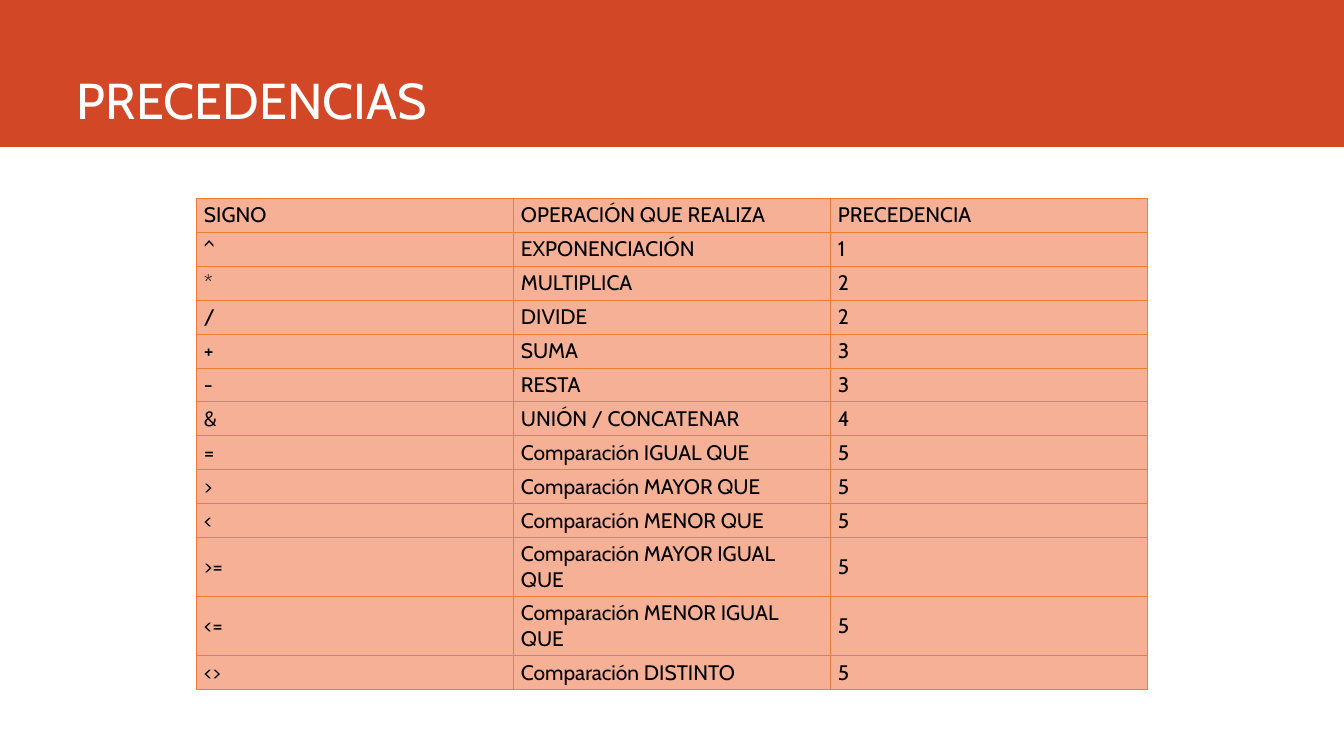
from lxml import etree
from pptx import Presentation
from pptx.dml.color import RGBColor
from pptx.enum.shapes import MSO_SHAPE
from pptx.enum.text import MSO_ANCHOR
from pptx.oxml.ns import qn
from pptx.util import Pt

RECTANGLE = MSO_SHAPE.RECTANGLE
BOTTOM, MIDDLE = MSO_ANCHOR.BOTTOM, MSO_ANCHOR.MIDDLE
RED = RGBColor(0xD2, 0x47, 0x26)
SALMON = RGBColor(0xF5, 0xB0, 0x96)
ORANGE = RGBColor(0xED, 0x7D, 0x31)
WHITE = RGBColor(0xFF, 0xFF, 0xFF)
BLACK = RGBColor(0x00, 0x00, 0x00)
WIDTH, HEIGHT = 1344, 756
SCALE = 12192000 / WIDTH
COLUMN, ROW, TALL_ROW = 317, 34, 59

PRECEDENCES = [
    ("SIGNO", "OPERACIÓN QUE REALIZA", "PRECEDENCIA"),
    ("^", "EXPONENCIACIÓN", "1"),
    ("*", "MULTIPLICA", "2"),
    ("/", "DIVIDE", "2"),
    ("+", "SUMA", "3"),
    ("-", "RESTA", "3"),
    ("&", "UNIÓN / CONCATENAR", "4"),
    ("=", "Comparación IGUAL QUE", "5"),
    (">", "Comparación MAYOR QUE", "5"),
    ("<", "Comparación MENOR QUE", "5"),
    (">=", "Comparación MAYOR IGUAL QUE", "5"),
    ("<=", "Comparación MENOR IGUAL QUE", "5"),
    ("<>", "Comparación DISTINTO", "5"),
]
TWO_LINE_SIGNS = {">=", "<="}


def px(*lengths):
    """Turn pixel lengths into EMU."""
    return [round(length * SCALE) for length in lengths]


class SlideBuilder:
    """Draw elements in one style on the current slide."""

    font_name = "Cabin"

    def __init__(self, slide):
        self.slide = slide

    def style(self, paragraph, size, color):
        """Set the font of a paragraph."""
        font = paragraph.font
        font.name, font.size = self.font_name, Pt(size)
        font.color.rgb = color

    def band(self, left, top, width, height, color):
        """Add a plain filled rectangle."""
        band = self.slide.shapes.add_shape(RECTANGLE, *px(left, top, width, height))
        band.shadow.inherit = False
        band.fill.solid()
        band.fill.fore_color.rgb = color
        band.line.fill.background()

    def title(self, text, left, top, width, height):
        """Add the slide title, set on the bottom of its box."""
        frame = self.slide.shapes.add_textbox(*px(left, top, width, height)).text_frame
        frame.word_wrap = True
        frame.vertical_anchor = BOTTOM
        frame.margin_left, frame.margin_right = px(10, 10)
        frame.margin_top, frame.margin_bottom = px(5, 5)
        frame.text = text
        self.style(frame.paragraphs[0], 36, WHITE)

    def table(self, rows, left, top):
        """Add a bordered table with equal columns."""
        heights = [TALL_ROW if row[0] in TWO_LINE_SIGNS else ROW for row in rows]
        columns = len(rows[0])
        table = self.slide.shapes.add_table(
            len(rows), columns, *px(left, top, COLUMN * columns, sum(heights))
        ).table
        for column in table.columns:
            column.width = px(COLUMN)[0]
        for row, height, texts in zip(table.rows, heights, rows):
            row.height = px(height)[0]
            for cell, text in zip(row.cells, texts):
                self.cell(cell, text)

    def cell(self, cell, text):
        """Fill, border and write one table cell."""
        cell.text = text
        cell.vertical_anchor = MIDDLE
        cell.margin_left, cell.margin_right = px(8, 8)
        cell.margin_top, cell.margin_bottom = px(4, 4)
        self.style(cell.text_frame.paragraphs[0], 15, BLACK)
        properties = cell._tc.get_or_add_tcPr()
        for side in ("a:lnL", "a:lnR", "a:lnT", "a:lnB"):
            border = etree.SubElement(properties, qn(side), w=str(Pt(0.5)))
            fill = etree.SubElement(border, qn("a:solidFill"))
            etree.SubElement(fill, qn("a:srgbClr"), val=str(ORANGE))
        cell.fill.solid()
        cell.fill.fore_color.rgb = SALMON


def main():
    """Build and save the slide."""
    presentation = Presentation()
    presentation.slide_width, presentation.slide_height = px(WIDTH, HEIGHT)
    builder = SlideBuilder(presentation.slides.add_slide(presentation.slide_layouts[6]))
    builder.band(0, 0, WIDTH, 147, RED)
    builder.title("PRECEDENCIAS", 67, 0, 1184, 135)
    builder.table(PRECEDENCES, 196, 198)
    presentation.save("out.pptx")


if __name__ == "__main__":
    main()
